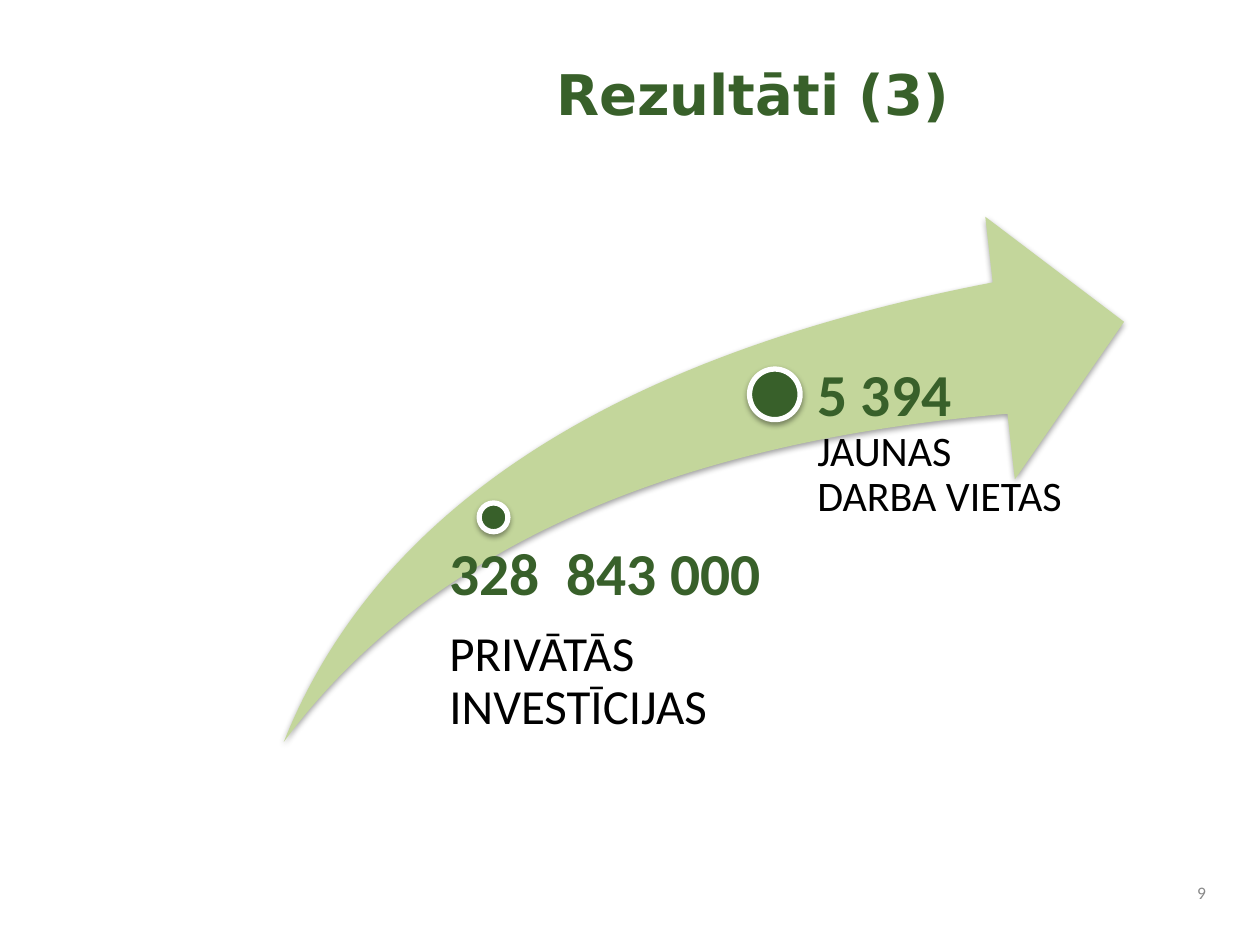
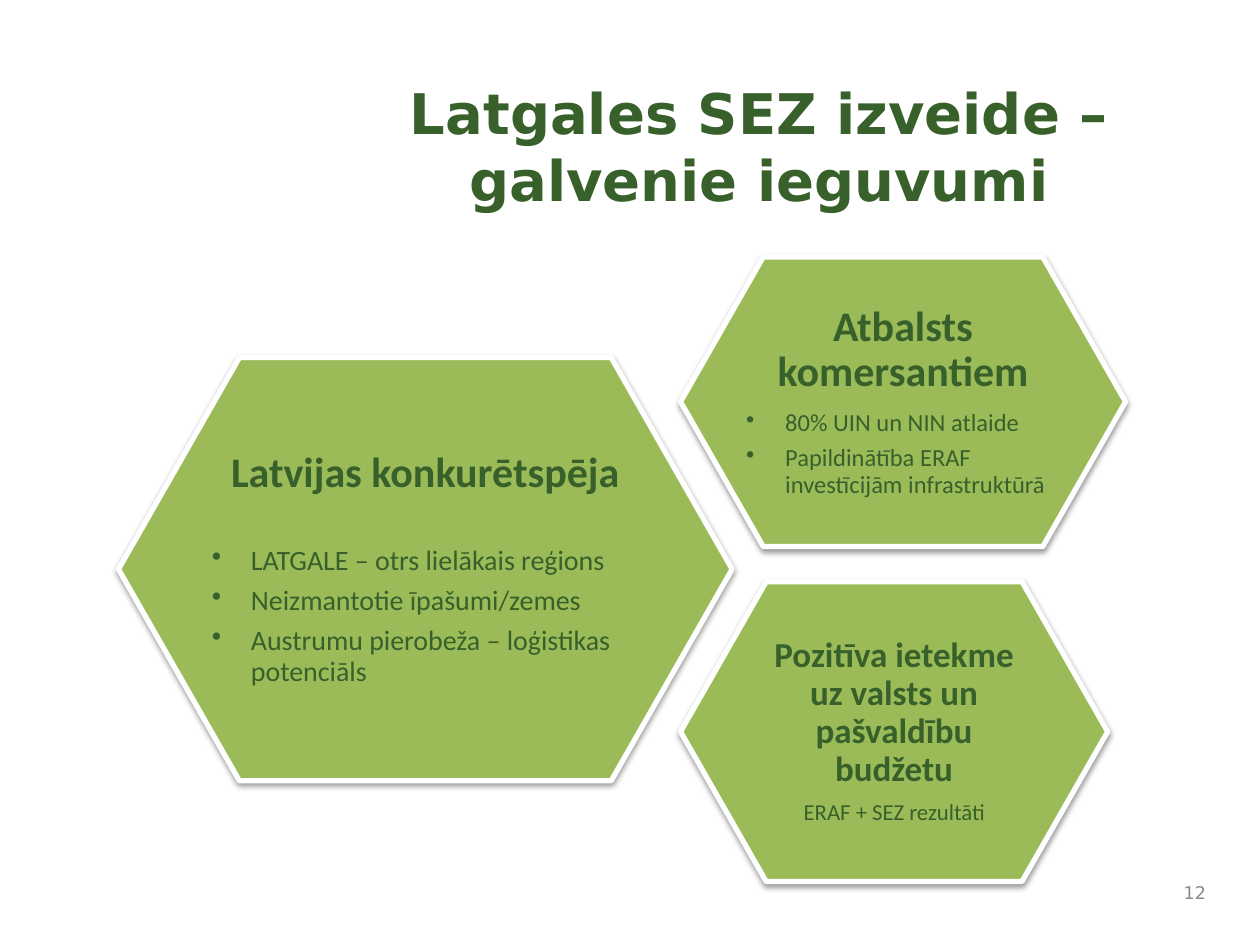
from dataclasses import dataclass
from lxml import etree
from pptx import Presentation
from pptx.dml.color import RGBColor
from pptx.enum import shapes as sh, text as tx
from pptx.oxml import ns, parse_xml
from pptx.util import Cm, Pt


@dataclass(frozen=True)
class Theme:
    dark: str = "38602A"
    leaf: str = "9BBB59"
    pale: str = "C3D69B"
    white: str = "FFFFFF"
    black: str = "000000"
    grey: str = "898989"
    head: str = "DejaVu Sans"
    body: str = "Calibri"
    title: int = 32
    figure: int = 34
    large: int = 28
    mid: int = 24
    foot: int = 10
    edge: int = 3
    tight: float = 0.9
    after: float = 0.35


T = Theme()
LEFT, MID, RIGHT = tx.PP_ALIGN.LEFT, tx.PP_ALIGN.CENTER, tx.PP_ALIGN.RIGHT
TOP, CENTRE = tx.MSO_ANCHOR.TOP, tx.MSO_ANCHOR.MIDDLE
HANG = Cm(0.79)
SLANT = 0.2857

RESULTS = dict(title="Rezultāti (3)", box=(4.95, 1.07, 20.45, 2.87), page="9", font=T.body)
GAINS = dict(title="Latgales SEZ izveide – galvenie ieguvumi",
             box=(5.21, 1.45, 20.19, 2.87), page="12", font=T.head)

ARROW = (5.72, 4.37, 16.94, 10.59)
STEPS = [
    dict(dot=(9.95, 10.43, 0.58), box=(8.76, 10.97, 6.76, 3.66), inset=0.3,
         lines=[[("328  843 000", T.figure, T.dark, True)],
                [("PRIVĀTĀS INVESTĪCIJAS", T.large, T.black, False)]]),
    dict(dot=(15.62, 7.95, 1.02), box=(15.95, 7.37, 5.51, 7.01), inset=0.53,
         lines=[[("5 394 ", T.figure, T.dark, True),
                 ("JAUNAS DARBA VIETAS", T.mid, T.black, False)]]),
]

HEXES = [
    dict(box=(2.39, 7.21, 12.37, 8.53), inset=(1.88, 1.32), gap=28.7,
         head=("Latvijas konkurētspēja", 24), size=16, bullet=True,
         items=["LATGALE – otrs lielākais reģions", "Neizmantotie īpašumi/zemes",
                "Austrumu pierobeža – loģistikas potenciāls"]),
    dict(box=(13.72, 5.18, 8.97, 5.84), inset=(1.32, 0.86), gap=8.4,
         head=("Atbalsts komersantiem", 24), size=14, bullet=True,
         items=["80% UIN un NIN atlaide", "Papildinātība ERAF investīcijām infrastruktūrā"]),
    dict(box=(13.72, 11.73, 8.61, 6.04), inset=(1.52, 1.07), gap=7,
         head=("Pozitīva ietekme uz valsts un pašvaldību budžetu", 20), size=13, bullet=False,
         items=["ERAF + SEZ rezultāti"]),
]


def cms(box):
    return [Cm(n) for n in box]


def frame(shape, inset, anchor):
    body = shape.text_frame
    body.word_wrap = True
    body.auto_size = tx.MSO_AUTO_SIZE.NONE
    body.vertical_anchor = anchor
    body.margin_left, body.margin_top, body.margin_right, body.margin_bottom = cms(inset)
    return body


def write(body, runs, first, align=LEFT, font=T.body, line=1.0, after=0, bullet=False):
    para = body.paragraphs[0] if first else body.add_paragraph()
    if bullet:
        props = para._p.get_or_add_pPr()
        props.set("marL", str(HANG))
        props.set("indent", str(-HANG))
        etree.SubElement(props, ns.qn("a:buChar")).set("char", "•")
    para.alignment, para.line_spacing, para.space_after = align, line, Pt(after)
    for words, size, colour, bold in runs:
        run = para.add_run()
        run.text = words
        run.font.name, run.font.size, run.font.bold = font, Pt(size), bold
        run.font.color.rgb = RGBColor.from_string(colour)


def paint(shape, fill, edge=None):
    shape.shadow.inherit = False
    shape.fill.solid()
    shape.fill.fore_color.rgb = RGBColor.from_string(fill)
    if edge:
        shape.line.color.rgb = RGBColor.from_string(edge)
        shape.line.width = Pt(T.edge)
    else:
        shape.line.fill.background()
    shade = parse_xml(
        f'<a:outerShdw {ns.nsdecls("a")} blurRad="{Pt(3.1)}" dist="{Pt(1.6)}" dir="5400000" '
        f'rotWithShape="0"><a:srgbClr val="{T.black}"><a:alpha val="38000"/></a:srgbClr>'
        '</a:outerShdw>')
    shape._element.spPr.find(ns.qn("a:effectLst")).append(shade)


def start(deck, info):
    slide = deck.slides.add_slide(deck.slide_layouts[5])
    title = slide.shapes.title
    title.left, title.top, title.width, title.height = cms(info["box"])
    pad = (0.25, 0.13, 0.25, 0.13)
    write(frame(title, pad, TOP), [(info["title"], T.title, T.dark, True)], True, MID, T.head)
    page = slide.shapes.add_textbox(*cms((23.39, 17.58, 1.17, 0.84)))
    write(frame(page, pad, CENTRE), [(info["page"], T.foot, T.grey, False)],
          True, RIGHT, info["font"])
    return slide.shapes


def add_step(tree, step):
    x, y, size = step["dot"]
    dot = tree.add_shape(sh.MSO_SHAPE.OVAL, *cms((x - size / 2, y - size / 2, size, size)))
    paint(dot, T.dark, T.white)
    label = tree.add_textbox(*cms(step["box"]))
    body = frame(label, (step["inset"], 0, 0, 0), TOP)
    for i, runs in enumerate(step["lines"]):
        write(body, runs, i == 0, line=T.tight, after=T.after * runs[0][1])


def add_hex(tree, item):
    x, y, w, h = cms(item["box"])
    cut = round(SLANT * h)
    pen = tree.build_freeform(x, y + h // 2)
    pen.add_line_segments([(x + cut, y), (x + w - cut, y), (x + w, y + h // 2),
                           (x + w - cut, y + h), (x + cut, y + h)], close=True)
    cell = pen.convert_to_shape()
    paint(cell, T.leaf, T.white)
    body = frame(cell, item["inset"] * 2, CENTRE)
    write(body, [(*item["head"], T.dark, True)], True, MID, line=T.tight, after=item["gap"])
    size, bullet = item["size"], item["bullet"]
    for words in item["items"]:
        write(body, [(words, size, T.dark, False)], False, LEFT if bullet else MID,
              line=T.tight, after=T.after * size, bullet=bullet)


def main():
    deck = Presentation()
    deck.slide_width, deck.slide_height = Cm(25.4), Cm(19.05)
    tree = start(deck, RESULTS)
    arrow = tree.add_shape(sh.MSO_SHAPE.SWOOSH_ARROW, *cms(ARROW))
    arrow.adjustments[0] = arrow.adjustments[1] = 0.25
    paint(arrow, T.pale)
    for step in STEPS:
        add_step(tree, step)
    tree = start(deck, GAINS)
    for item in HEXES:
        add_hex(tree, item)
    deck.save("out.pptx")


if __name__ == "__main__":
    main()
